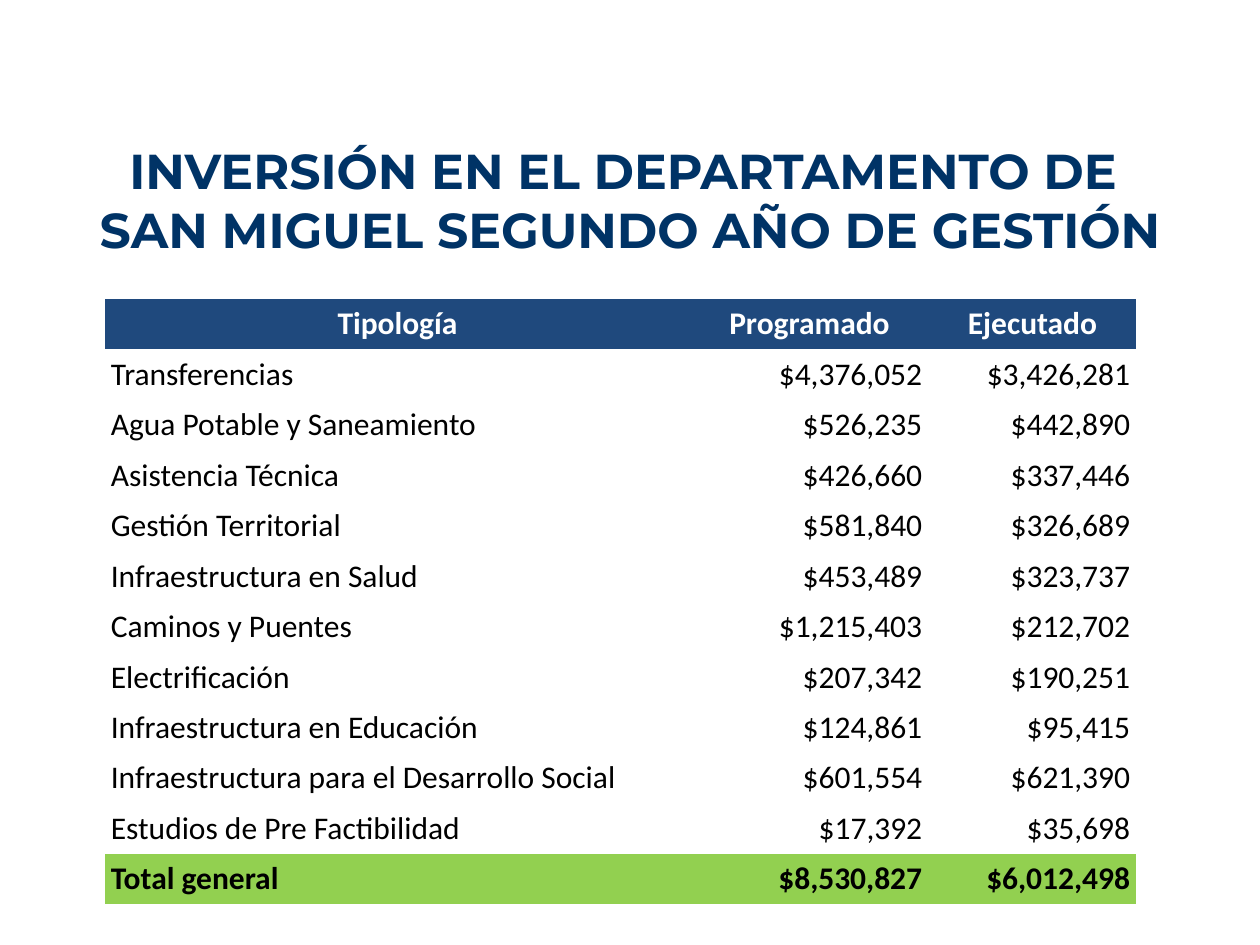
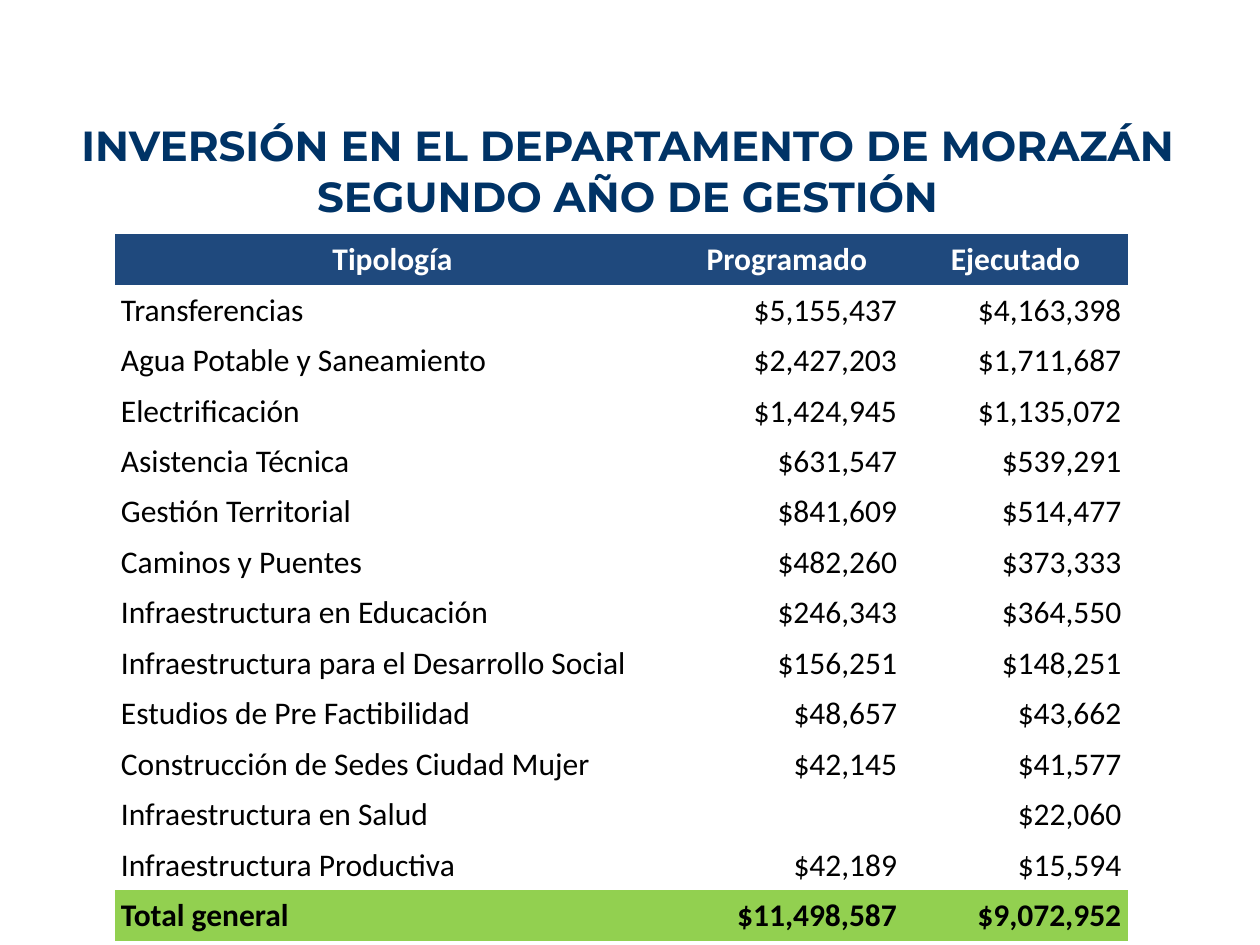
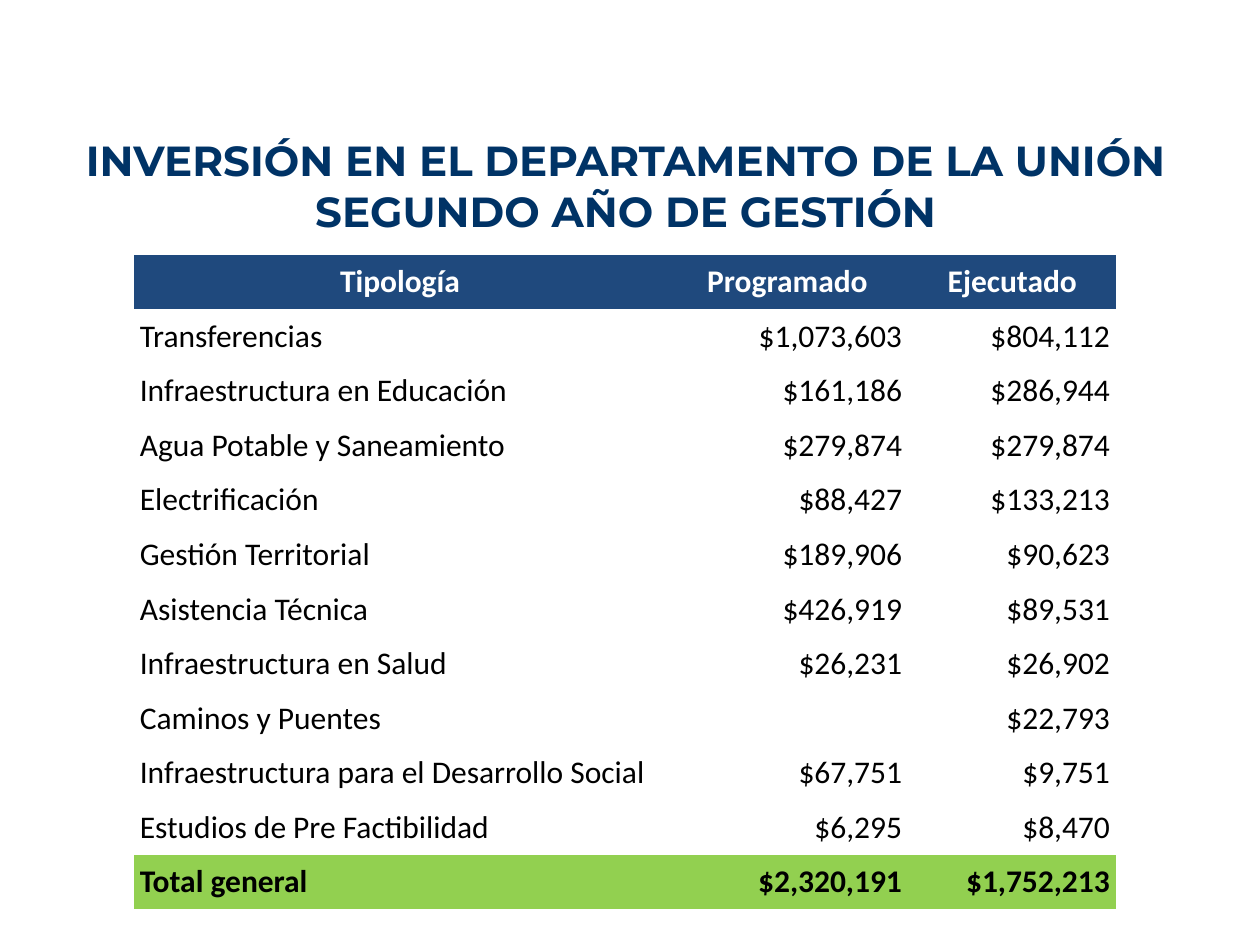
from pptx import Presentation
from pptx.dml.color import RGBColor
from pptx.enum.text import MSO_ANCHOR, PP_ALIGN
from pptx.util import Inches, Pt

LEFT, CENTER, RIGHT = PP_ALIGN.LEFT, PP_ALIGN.CENTER, PP_ALIGN.RIGHT
MIDDLE = MSO_ANCHOR.MIDDLE

NAVY = RGBColor(0x00, 0x33, 0x66)
BLUE = RGBColor(0x1F, 0x49, 0x7D)
GREEN = RGBColor(0x92, 0xD0, 0x50)
WHITE = RGBColor(0xFF, 0xFF, 0xFF)
BLACK = RGBColor(0x00, 0x00, 0x00)

TITLE_FONT, TABLE_FONT = "Montserrat", "Calibri"
TABLE_SIZE = 18
CELL_MARGIN = Inches(0.05)
NO_STYLE = "{2D5ABB26-0587-4C30-8999-92F81FD0307C}"

# Content: lengths in inches, amounts in dollars (None leaves the cell empty)
HEADER = ("Tipología", "Programado", "Ejecutado")
TOTAL = "Total general"
DEPARTMENTS = [
    {
        "title": "INVERSIÓN EN EL DEPARTAMENTO DE \nSAN MIGUEL SEGUNDO AÑO DE GESTIÓN",
        "title_box": (0, 0.99, 10, 1.18),
        "title_size": 28,
        "table_at": (0.83, 2.37),
        "columns": (4.65, 1.89, 1.65),
        "table_height": 4.8,
        "rows": [
            ("Transferencias", 4376052, 3426281),
            ("Agua Potable y Saneamiento", 526235, 442890),
            ("Asistencia Técnica", 426660, 337446),
            ("Gestión Territorial", 581840, 326689),
            ("Infraestructura en Salud", 453489, 323737),
            ("Caminos y Puentes", 1215403, 212702),
            ("Electrificación", 207342, 190251),
            ("Infraestructura en Educación", 124861, 95415),
            ("Infraestructura para el Desarrollo Social", 601554, 621390),
            ("Estudios de Pre Factibilidad", 17392, 35698),
        ],
        "total": (8530827, 6012498),
    },
    {
        "title": "INVERSIÓN EN EL DEPARTAMENTO DE MORAZÁN SEGUNDO AÑO DE GESTIÓN",
        "title_box": (0.12, 0.6, 9.72, 1.5),
        "title_size": 24,
        "table_at": (0.91, 1.86),
        "columns": (4.41, 1.85, 1.78),
        "table_height": 5.6,
        "rows": [
            ("Transferencias", 5155437, 4163398),
            ("Agua Potable y Saneamiento", 2427203, 1711687),
            ("Electrificación", 1424945, 1135072),
            ("Asistencia Técnica", 631547, 539291),
            ("Gestión Territorial", 841609, 514477),
            ("Caminos y Puentes", 482260, 373333),
            ("Infraestructura en Educación", 246343, 364550),
            ("Infraestructura para el Desarrollo Social", 156251, 148251),
            ("Estudios de Pre Factibilidad", 48657, 43662),
            ("Construcción de Sedes Ciudad Mujer", 42145, 41577),
            ("Infraestructura en Salud", None, 22060),
            ("Infraestructura Productiva", 42189, 15594),
        ],
        "total": (11498587, 9072952),
    },
    {
        "title": "INVERSIÓN EN EL DEPARTAMENTO DE LA UNIÓN\nSEGUNDO AÑO DE GESTIÓN",
        "title_box": (0.2, 0.84, 9.53, 1.26),
        "title_size": 24,
        "table_at": (1.06, 2.02),
        "columns": (4.23, 1.92, 1.65),
        "table_height": 5.2,
        "rows": [
            ("Transferencias", 1073603, 804112),
            ("Infraestructura en Educación", 161186, 286944),
            ("Agua Potable y Saneamiento", 279874, 279874),
            ("Electrificación", 88427, 133213),
            ("Gestión Territorial", 189906, 90623),
            ("Asistencia Técnica", 426919, 89531),
            ("Infraestructura en Salud", 26231, 26902),
            ("Caminos y Puentes", None, 22793),
            ("Infraestructura para el Desarrollo Social", 67751, 9751),
            ("Estudios de Pre Factibilidad", 6295, 8470),
        ],
        "total": (2320191, 1752213),
    },
]


def add_run(p, text, font, size, color, bold):
    r = p.add_run()
    r.text = text
    r.font.name, r.font.size = font, Pt(size)
    r.font.color.rgb, r.font.bold = color, bold


def add_title(slide, text, box, size):
    tf = slide.shapes.add_textbox(*map(Inches, box)).text_frame
    tf.word_wrap = True
    tf.vertical_anchor = MIDDLE
    p = tf.paragraphs[0]
    p.alignment = CENTER
    for i, line in enumerate(text.split("\n")):
        if i:
            p.add_line_break()
        add_run(p, line, TITLE_FONT, size, NAVY, True)


def fill_cell(cell, value, align, fill, color, bold):
    cell.fill.solid()
    cell.fill.fore_color.rgb = fill
    cell.vertical_anchor = MIDDLE
    cell.margin_left = cell.margin_right = CELL_MARGIN
    cell.margin_top = cell.margin_bottom = CELL_MARGIN
    p = cell.text_frame.paragraphs[0]
    p.alignment = align
    if value is not None:
        text = value if isinstance(value, str) else f"${value:,}"
        add_run(p, text, TABLE_FONT, TABLE_SIZE, color, bold)


def add_investment_table(slide, dept):
    rows = [HEADER, *dept["rows"], (TOTAL, *dept["total"])]
    columns = dept["columns"]
    size = (sum(columns), dept["table_height"])
    table = slide.shapes.add_table(
        len(rows), len(columns), *map(Inches, dept["table_at"] + size)).table
    table.first_row = table.horz_banding = False
    table._tbl.tblPr[0].text = NO_STYLE
    for column, width in zip(table.columns, columns):
        column.width = Inches(width)

    for i, values in enumerate(rows):
        is_header, is_total = i == 0, i == len(rows) - 1
        fill = BLUE if is_header else GREEN if is_total else WHITE
        color = WHITE if is_header else BLACK
        aligns = (CENTER,) * 3 if is_header else (LEFT, RIGHT, RIGHT)
        for j, (value, align) in enumerate(zip(values, aligns)):
            fill_cell(table.cell(i, j), value, align, fill, color,
                      is_header or is_total)


def main():
    prs = Presentation()
    prs.slide_width, prs.slide_height = Inches(10), Inches(7.5)
    for dept in DEPARTMENTS:
        slide = prs.slides.add_slide(prs.slide_layouts[6])
        add_title(slide, dept["title"], dept["title_box"], dept["title_size"])
        add_investment_table(slide, dept)
    prs.save("out.pptx")


if __name__ == "__main__":
    main()
